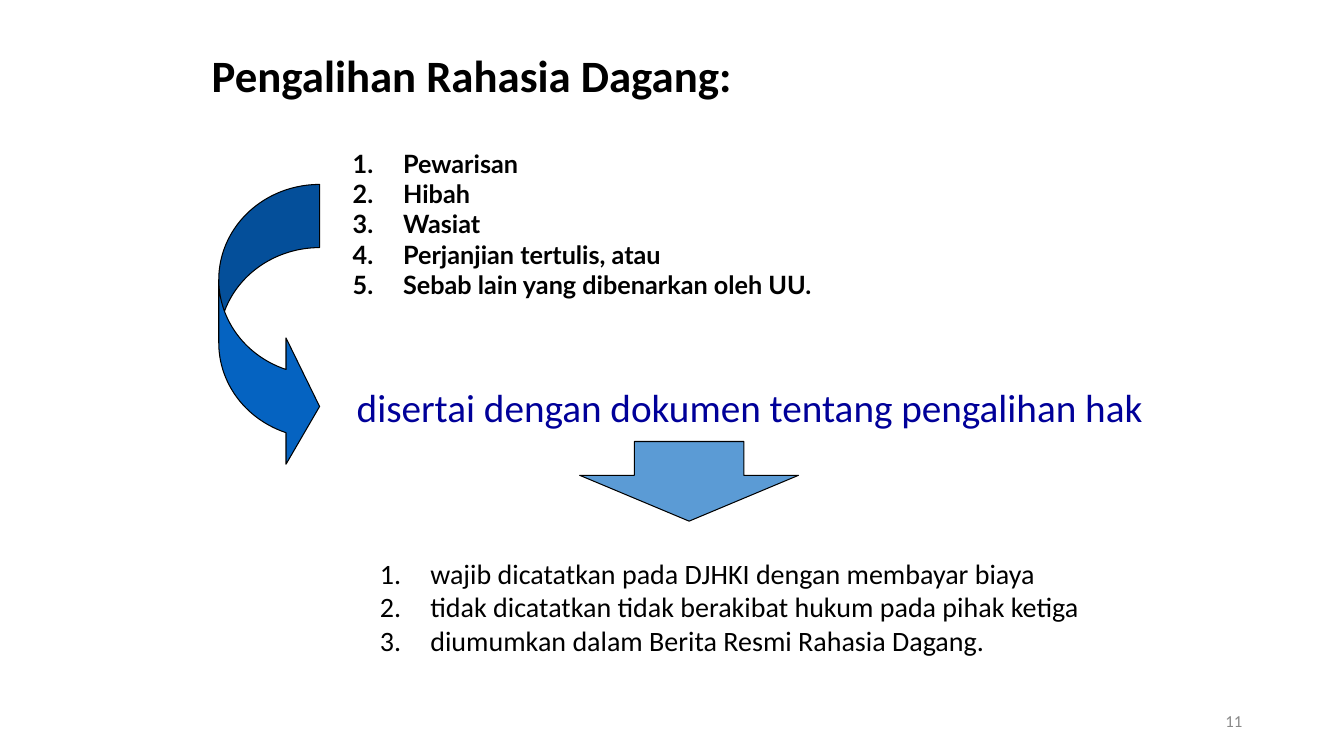
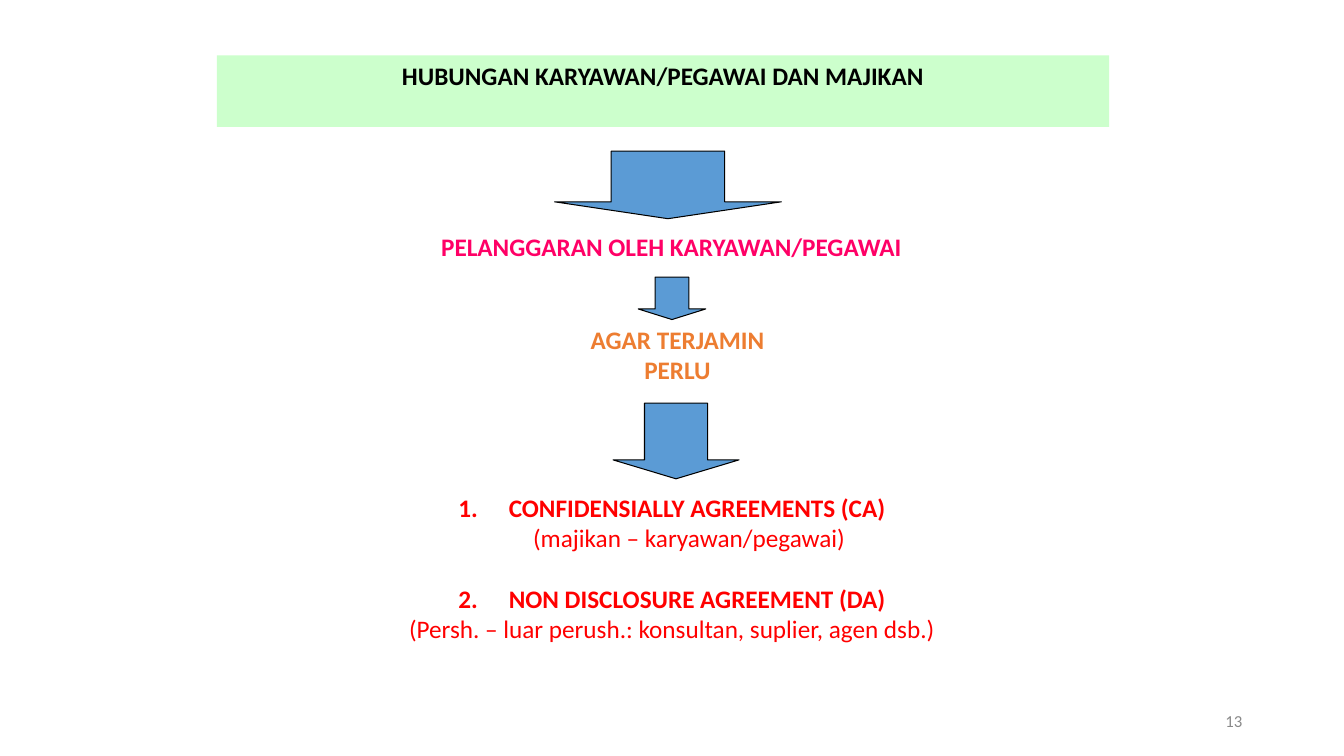
from dataclasses import dataclass

from lxml import etree
from pptx import Presentation
from pptx.dml.color import RGBColor
from pptx.enum.shapes import MSO_SHAPE
from pptx.enum.text import MSO_ANCHOR, MSO_AUTO_SIZE, PP_ALIGN
from pptx.oxml.ns import qn
from pptx.util import Inches, Pt

LEFT, CENTER, RIGHT = PP_ALIGN.LEFT, PP_ALIGN.CENTER, PP_ALIGN.RIGHT
TOP, MIDDLE = MSO_ANCHOR.TOP, MSO_ANCHOR.MIDDLE
DOWN, CURVED = MSO_SHAPE.DOWN_ARROW, MSO_SHAPE.CURVED_RIGHT_ARROW
TITLE_ONLY = 5


@dataclass(frozen=True)
class Theme:
    font: str = "Calibri"
    list_font: str = "Lato"
    black: str = "000000"
    gray: str = "898989"
    navy: str = "000099"
    blue: str = "5B9BD5"
    deep: str = "0563C1"
    green: str = "CCFFCC"
    pink: str = "FF0066"
    orange: str = "ED7D31"
    red: str = "FF0000"
    title: int = 32
    lead: int = 28
    item: int = 20
    body: int = 18
    foot: int = 12
    edge: float = 0.75


THEME = Theme()


@dataclass(frozen=True)
class Box:
    left: float
    top: float
    width: float
    height: float

    def place(self) -> tuple:
        return tuple(Inches(n) for n in (self.left, self.top, self.width, self.height))


@dataclass(frozen=True)
class Style:
    size: int = THEME.body
    color: str = THEME.black
    bold: bool = False
    font: str = THEME.font
    align: PP_ALIGN = LEFT
    anchor: MSO_ANCHOR = TOP


@dataclass(frozen=True)
class Line:
    text: str
    number: int = 0
    bold: bool | None = None
    indent: float = 0
    before: float = 0


@dataclass(frozen=True)
class Arrow:
    box: Box
    adjust: tuple = (0.5, 0.25)
    kind: MSO_SHAPE = DOWN
    fill: str = THEME.blue


def set_indent(para, line: Line) -> None:
    """Set the left indent, and hang an automatic number if there is one."""
    props = para._p.get_or_add_pPr()
    margin = 0.5 if line.number else line.indent
    props.set("marL", str(Inches(margin)))
    props.set("indent", str(-Inches(margin) if line.number else 0))
    if line.number:
        mark = etree.SubElement(props, qn("a:buAutoNum"), type="arabicPeriod")
        mark.set("startAt", str(line.number))


def fill_text(shape, lines: list[Line], style: Style) -> None:
    frame = shape.text_frame
    look = {"word_wrap": True, "auto_size": MSO_AUTO_SIZE.NONE,
            "vertical_anchor": style.anchor}
    for name, value in look.items():
        setattr(frame, name, value)
    for index, line in enumerate(lines):
        para = frame.add_paragraph() if index else frame.paragraphs[0]
        para.alignment = style.align
        if line.before:
            para.space_before = Pt(line.before)
        set_indent(para, line)
        run = para.add_run()
        run.text = line.text
        bold = style.bold if line.bold is None else line.bold
        face = {"name": style.font, "size": Pt(style.size), "bold": bold}
        for name, value in face.items():
            setattr(run.font, name, value)
        run.font.color.rgb = RGBColor.from_string(style.color)


def add_text(slide, box: Box, lines: list[Line], style: Style) -> None:
    fill_text(slide.shapes.add_textbox(*box.place()), lines, style)


def add_arrow(slide, arrow: Arrow) -> None:
    shape = slide.shapes.add_shape(arrow.kind, *arrow.box.place())
    shape.shadow.inherit = False
    for index, value in enumerate(arrow.adjust):
        shape.adjustments[index] = value
    shape.fill.solid()
    shape.fill.fore_color.rgb = RGBColor.from_string(arrow.fill)
    shape.line.color.rgb = RGBColor.from_string(THEME.black)
    shape.line.width = Pt(THEME.edge)


def start_slide(deck, box: Box, title: str, style: Style, page: int, fill: str = ""):
    """Add a slide with its title, optional title band and page number."""
    slide = deck.slides.add_slide(deck.slide_layouts[TITLE_ONLY])
    head = slide.shapes.title
    head.left, head.top, head.width, head.height = box.place()
    if fill:
        head.fill.solid()
        head.fill.fore_color.rgb = RGBColor.from_string(fill)
    fill_text(head, [Line(title)], style)
    foot = Style(THEME.foot, THEME.gray, align=RIGHT, anchor=MIDDLE)
    add_text(slide, Box(9.42, 6.95, 3, 0.4), [Line(str(page))], foot)
    return slide


def number(*texts: str) -> list[Line]:
    return [Line(text, 1) for text in texts]


def build_transfer(deck) -> None:
    slide = start_slide(deck, Box(2, 0.42, 7.25, 0.64), "Pengalihan Rahasia Dagang:",
                        Style(THEME.title, bold=True), 11)
    causes = number("Pewarisan", "Hibah", "Wasiat", "Perjanjian tertulis, atau",
                    "Sebab lain yang dibenarkan oleh UU.")
    add_text(slide, Box(3.4, 1.42, 7.5, 1.62), causes,
             Style(bold=True, font=THEME.list_font))
    add_text(slide, Box(3.44, 3.75, 8.06, 0.6),
             [Line("disertai dengan dokumen tentang pengalihan hak")],
             Style(THEME.lead, THEME.navy))
    duties = number("wajib dicatatkan pada DJHKI dengan membayar biaya",
                    "tidak dicatatkan tidak berakibat hukum pada pihak ketiga",
                    "diumumkan dalam Berita Resmi Rahasia Dagang.")
    add_text(slide, Box(3.67, 5.47, 8, 1.45), duties, Style(THEME.item))
    add_arrow(slide, Arrow(Box(2.17, 1.83, 1, 2.83), (0.627, 1.253, 0.333),
                           CURVED, THEME.deep))
    add_arrow(slide, Arrow(Box(5.75, 4.38, 2.17, 0.79), (0.5, 0.575)))


def build_staff(deck) -> None:
    slide = start_slide(deck, Box(2.15, 0.55, 8.85, 0.71),
                        "HUBUNGAN KARYAWAN/PEGAWAI DAN MAJIKAN",
                        Style(bold=True, align=CENTER), 13, THEME.green)
    deals = [
        Line("CONFIDENSIALLY AGREEMENTS (CA)", 1),
        Line("(majikan – karyawan/pegawai)", bold=False, indent=0.34),
        Line("NON DISCLOSURE AGREEMENT (DA)", 2, before=22),
        Line("(Persh. – luar perush.: konsultan, suplier, agen dsb.)", bold=False),
    ]
    steps = [
        (Box(4.25, 2.25, 4.82, 0.4), THEME.pink,
         [Line("PELANGGARAN OLEH KARYAWAN/PEGAWAI")]),
        (Box(3.83, 3.17, 5.78, 0.71), THEME.orange,
         [Line("AGAR TERJAMIN"), Line("PERLU")]),
        (Box(2.83, 4.83, 7.67, 1.62), THEME.red, deals),
    ]
    for box, color, lines in steps:
        add_text(slide, box, lines, Style(color=color, bold=True, align=CENTER))
    for box in (Box(5.5, 1.5, 2.25, 0.67), Box(6.33, 2.75, 0.67, 0.42),
                Box(6.08, 4, 1.25, 0.75)):
        add_arrow(slide, Arrow(box))


def main() -> None:
    deck = Presentation()
    deck.slide_width, deck.slide_height = Inches(13.33), Inches(7.5)
    build_transfer(deck)
    build_staff(deck)
    deck.save("out.pptx")


if __name__ == "__main__":
    main()
